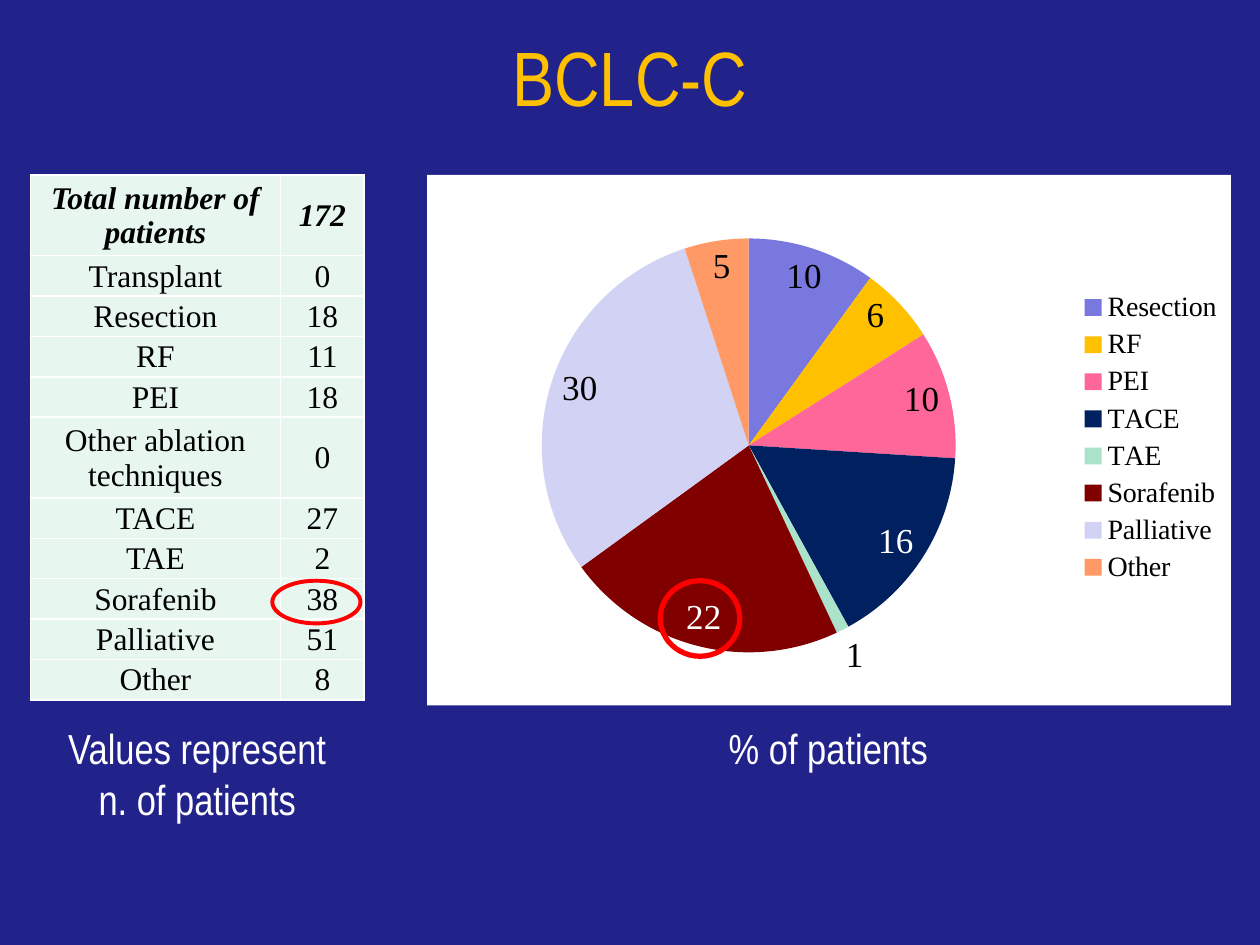
import dataclasses

import pptx
import pptx.chart.data
import pptx.dml.color
import pptx.enum.chart
import pptx.enum.shapes
import pptx.enum.text
import pptx.oxml
import pptx.oxml.ns
import pptx.util

Inches = pptx.util.Inches
Pt = pptx.util.Pt
Align = pptx.enum.text.PP_ALIGN
Anchor = pptx.enum.text.MSO_ANCHOR


@dataclasses.dataclass(frozen=True)
class Theme:
    back: str = "22228B"
    gold: str = "FFC000"
    white: str = "FFFFFF"
    black: str = "000000"
    mint: str = "E7F6EF"
    red: str = "FF0000"
    sans: str = "Arial Narrow"
    serif: str = "Times New Roman"
    title: int = 44
    note: int = 24
    cell: int = 18
    label: int = 20
    legend: int = 16


THEME = Theme()
PAGE = (0, 0, 10, 7.5)

COUNTS = [
    ("Total number of patients", 172), ("Transplant", 0), ("Resection", 18),
    ("RF", 11), ("PEI", 18), ("Other ablation techniques", 0), ("TACE", 27),
    ("TAE", 2), ("Sorafenib", 38), ("Palliative", 51), ("Other", 8),
]
TALL = (0, 5)  # rows whose names take two lines

# name, percent, slice colour, label colour
SLICES = [
    ("Resection", 10, "7878DE", THEME.black),
    ("RF", 6, THEME.gold, THEME.black),
    ("PEI", 10, "FF6699", THEME.black),
    ("TACE", 16, "002060", THEME.white),
    ("TAE", 1, "AAE2CA", THEME.black),
    ("Sorafenib", 22, "800000", THEME.white),
    ("Palliative", 30, "D2D2F4", THEME.black),
    ("Other", 5, "FF9966", THEME.black),
]


def rgb(code):
    return pptx.dml.color.RGBColor.from_string(code)


def part(box, x, y, w, h):
    """Return the part of a box given by percent shares of its size."""
    left, top, wide, high = box
    return (left + wide * x / 100, top + high * y / 100,
            wide * w / 100, high * h / 100)


def place(box):
    return [Inches(side) for side in box]


def style(font, face, size, color, bold=False, italic=False):
    font.name, font.size = face, Pt(size)
    font.bold, font.italic = bold, italic
    font.color.rgb = rgb(color)


def write(frame, text, **form):
    frame.word_wrap = True
    para = frame.paragraphs[0]
    para.text = text
    para.alignment = Align.CENTER
    for run in para.runs:
        style(run.font, **form)


def add_text(slide, box, text, anchor=Anchor.TOP, **form):
    frame = slide.shapes.add_textbox(*place(box)).text_frame
    frame.vertical_anchor = anchor
    write(frame, text, **form)


def add_note(slide, box, text):
    add_text(slide, box, text, face=THEME.sans, size=THEME.note,
             color=THEME.white)


def add_ring(slide, box, width):
    ring = slide.shapes.add_shape(pptx.enum.shapes.MSO_SHAPE.OVAL, *place(box))
    ring.shadow.inherit = False
    ring.fill.background()
    ring.line.color.rgb = rgb(THEME.red)
    ring.line.width = Pt(width)


def edge(cell):
    """Draw white lines on all four sides of a table cell."""
    props = cell._tc.get_or_add_tcPr()
    for spot, side in enumerate(("lnL", "lnR", "lnT", "lnB")):
        props.insert(spot, pptx.oxml.parse_xml(
            f'<a:{side} {pptx.oxml.ns.nsdecls("a")} w="12700"><a:solidFill>'
            f'<a:srgbClr val="{THEME.white}"/></a:solidFill></a:{side}>'))


def fill_cell(cell, text, strong):
    cell.margin_left = cell.margin_right = cell.margin_top = Inches(0.01)
    cell.margin_bottom = 0
    cell.vertical_anchor = Anchor.MIDDLE
    cell.fill.solid()
    cell.fill.fore_color.rgb = rgb(THEME.mint)
    edge(cell)
    write(cell.text_frame, text, face=THEME.serif, size=THEME.cell,
          color=THEME.black, bold=strong, italic=strong)


def add_counts(slide, box):
    table = slide.shapes.add_table(len(COUNTS), 2, *place(box)).table
    wide, high = box[2:]
    for col, share in zip(table.columns, (0.75, 0.25)):
        col.width = Inches(wide * share)
    unit = high / (len(COUNTS) + len(TALL))
    for num, pair in enumerate(COUNTS):
        table.rows[num].height = Inches(unit * (2 if num in TALL else 1))
        for col, value in enumerate(pair):
            fill_cell(table.cell(num, col), str(value), num == 0)


def fix_layout(owner, x, y, w, h, inner=False):
    """Pin a chart part at shares of the chart's size."""
    for old in owner.findall(pptx.oxml.ns.qn("c:layout")):
        owner.remove(old)
    target = '<c:layoutTarget val="inner"/>' if inner else ""
    sides = "".join(f'<c:{key} val="{value}"/>' for key, value in (
        ("xMode", "edge"), ("yMode", "edge"),
        ("x", x), ("y", y), ("w", w), ("h", h)))
    layout = pptx.oxml.parse_xml(
        f'<c:layout {pptx.oxml.ns.nsdecls("c")}><c:manualLayout>'
        f'{target}{sides}</c:manualLayout></c:layout>')
    owner.insert(0 if inner else 1, layout)


def add_pie(slide, box):
    data = pptx.chart.data.CategoryChartData(number_format="0")
    data.categories = [name for name, *_ in SLICES]
    data.add_series("Series 1", [value for _, value, *_ in SLICES])
    chart = slide.shapes.add_chart(
        pptx.enum.chart.XL_CHART_TYPE.PIE, *place(box), data).chart
    chart.has_title = False
    style(chart.font, THEME.serif, 10, THEME.black)
    chart.has_legend = True
    legend = chart.legend
    legend.position = pptx.enum.chart.XL_LEGEND_POSITION.RIGHT
    legend.include_in_layout = False
    style(legend.font, THEME.serif, THEME.legend, THEME.black)
    root = chart._chartSpace
    fix_layout(root.chart.plotArea, 0.14, 0.12, 0.52, 0.78, inner=True)
    fix_layout(legend._element, 0.81, 0.21, 0.18, 0.57)
    root.chart.addnext(pptx.oxml.parse_xml(
        f'<c:spPr {pptx.oxml.ns.nsdecls("c", "a")}><a:solidFill>'
        f'<a:srgbClr val="{THEME.white}"/></a:solidFill>'
        '<a:ln><a:noFill/></a:ln></c:spPr>'))

    best = pptx.enum.chart.XL_LABEL_POSITION.BEST_FIT
    series = chart.plots[0].series[0]
    labels = series.data_labels
    labels.show_value, labels.show_percentage = True, False
    labels.number_format, labels.number_format_is_linked = "0", False
    labels.position = best
    style(labels.font, THEME.serif, THEME.label, THEME.black)
    for num, (_, _, color, ink) in enumerate(SLICES):
        point = series.points[num]
        point.format.fill.solid()
        point.format.fill.fore_color.rgb = rgb(color)
        if ink != THEME.black:
            style(point.data_label.font, THEME.serif, THEME.label, ink)
            point.data_label.position = best


def count_side(slide, box):
    add_counts(slide, part(box, 0, 0, 100, 80))
    add_note(slide, part(box, 1, 82.5, 98, 17.5),
             "Values represent\vn. of patients")
    add_ring(slide, part(box, 72.5, 61.8, 26.4, 6.5), 2.25)


def share_side(slide, box):
    add_pie(slide, part(box, 0, 0, 100, 80.8))
    add_ring(slide, part(box, 29, 61.8, 9.9, 11.5), 3)
    add_note(slide, part(box, 16.6, 82.5, 66.6, 9.6), "% of patients")


def main():
    deck = pptx.Presentation()
    deck.slide_width, deck.slide_height = place(PAGE[2:])
    slide = deck.slides.add_slide(deck.slide_layouts[6])
    slide.background.fill.solid()
    slide.background.fill.fore_color.rgb = rgb(THEME.back)
    add_text(slide, part(PAGE, 0, 0.7, 100, 14.6), "BCLC-C", Anchor.MIDDLE,
             face=THEME.sans, size=THEME.title, color=THEME.gold)
    count_side(slide, part(PAGE, 2.4, 18.5, 26.5, 69.5))
    share_side(slide, part(PAGE, 33.9, 18.5, 63.8, 69.5))
    deck.save("out.pptx")


if __name__ == "__main__":
    main()
